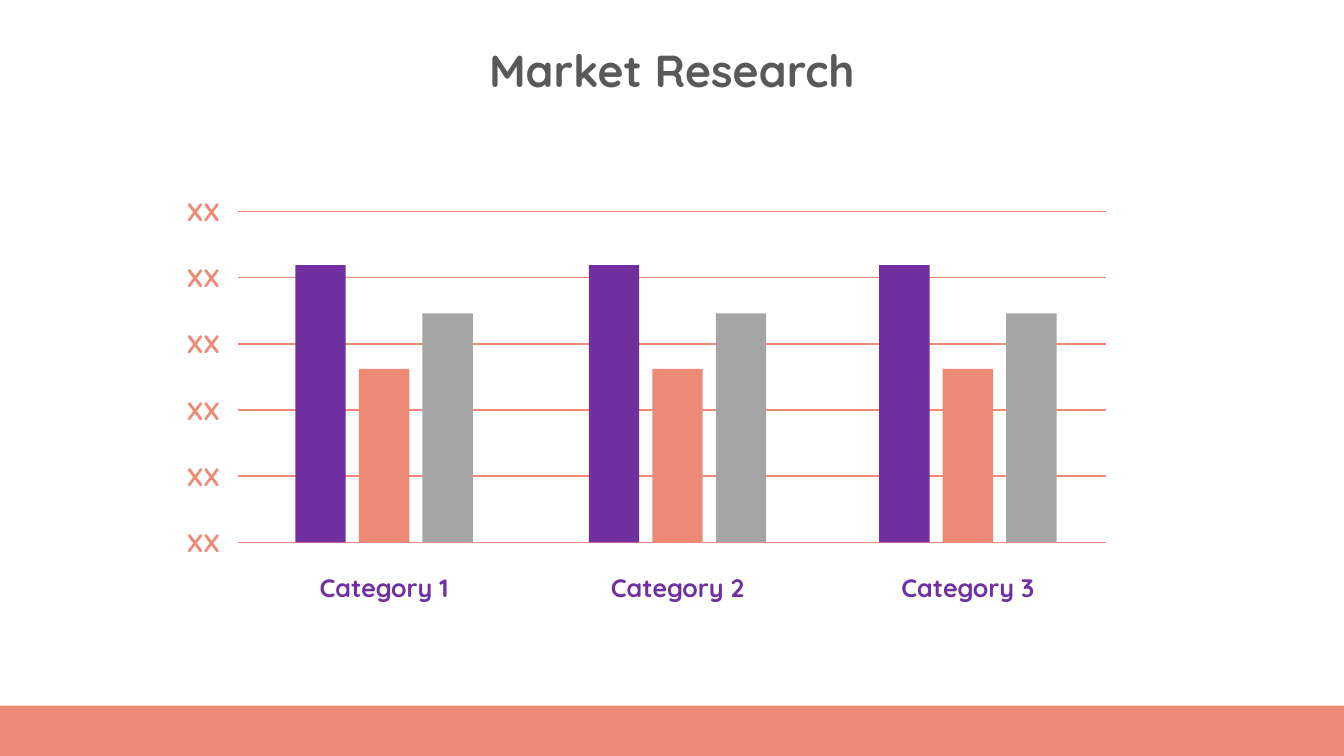
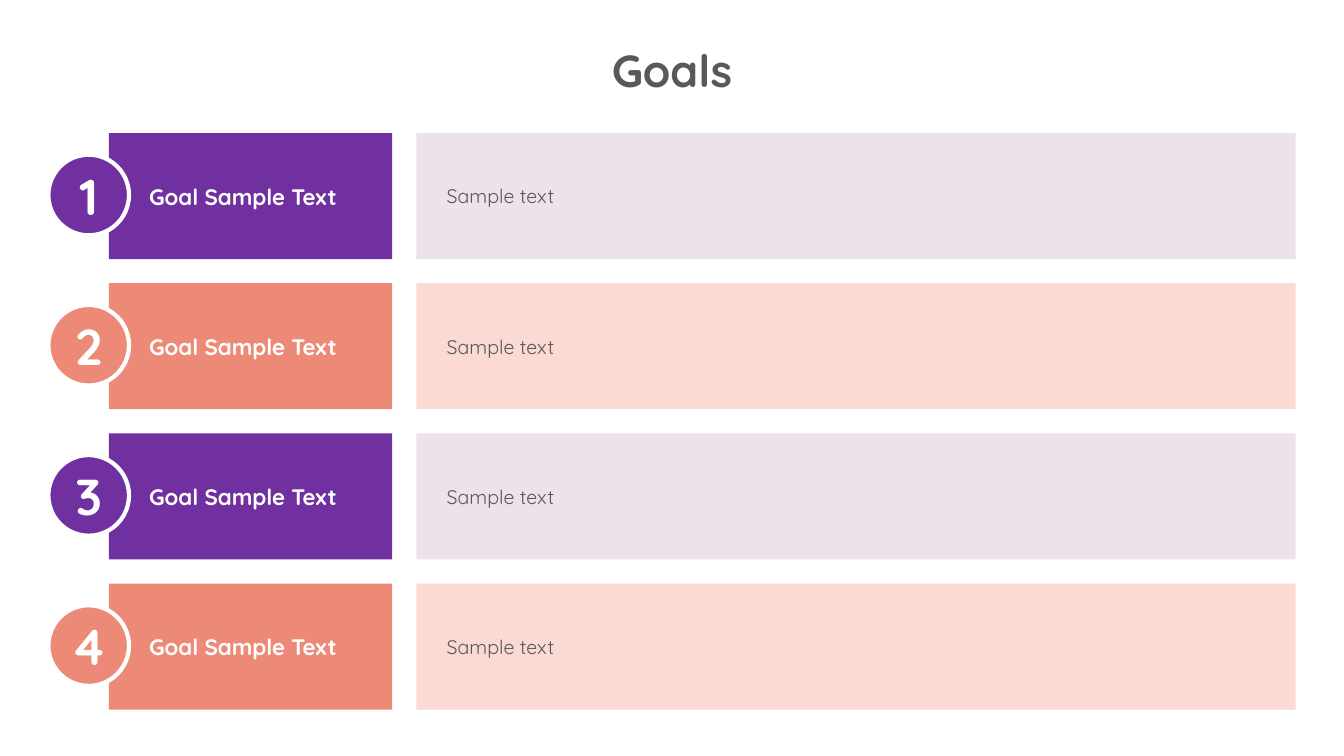
"""Build a market research slide and a goals slide."""
from dataclasses import dataclass

from lxml.etree import SubElement
from pptx import Presentation
from pptx.dml.color import RGBColor
from pptx.enum.shapes import MSO_CONNECTOR, MSO_SHAPE
from pptx.enum.text import MSO_ANCHOR as Anchor, PP_ALIGN as Align
from pptx.oxml.ns import qn
from pptx.util import Inches, Pt


@dataclass(frozen=True)
class Theme:
    font: str = "Quicksand"
    purple: str = "7030A0"
    coral: str = "ED8A77"
    gray: str = "A5A5A5"
    dark: str = "595959"
    white: str = "FFFFFF"
    pale_purple: str = "EDE2E9"
    pale_coral: str = "FADAD3"
    title_size: int = 32
    number_size: int = 36
    label_size: int = 18
    goal_size: int = 16
    body_size: int = 14


theme = Theme()


def add_box(slide, kind, area, fill):
    """Add a filled shape without outline or shadow."""
    box = slide.shapes.add_shape(kind, *map(Inches, area))
    box.shadow.inherit = False
    box.fill.solid()
    box.fill.fore_color.rgb = RGBColor.from_string(fill)
    box.line.fill.background()
    return box


def write(box, text, size, color, align, bold=True, insets=(0.1, 0.05, 0.1, 0.05), anchor=Anchor.MIDDLE):
    """Write one styled paragraph into a shape."""
    frame = box.text_frame
    frame.word_wrap = True
    frame.vertical_anchor = anchor
    frame.margin_left, frame.margin_top, frame.margin_right, frame.margin_bottom = map(Inches, insets)
    para = frame.paragraphs[0]
    para.alignment = align
    span = para.add_run()
    span.text = text
    span.font.name = theme.font
    span.font.size = Pt(size)
    span.font.bold = bold
    span.font.color.rgb = RGBColor.from_string(color)


deck = Presentation()
deck.slide_width, deck.slide_height = Inches(13.33), Inches(7.5)

slides = []
for title in ("Market Research", "Goals"):
    slide = deck.slides.add_slide(deck.slide_layouts[6])
    title_box = slide.shapes.add_textbox(Inches(3.12), Inches(0.37), Inches(7.09), Inches(0.64))
    write(title_box, title, theme.title_size, theme.dark, Align.CENTER, anchor=Anchor.TOP)
    slides.append(slide)
research, goals = slides

axis_left, axis_right, axis_top, baseline = 2.36, 10.97, 2.1, 5.38
grid_count = 6
grid_step = (baseline - axis_top) / (grid_count - 1)
grid = research.shapes.add_group_shape()
for index in range(grid_count):
    y = axis_top + index * grid_step
    line = grid.shapes.add_connector(
        MSO_CONNECTOR.STRAIGHT, Inches(axis_left), Inches(y), Inches(axis_right), Inches(y)
    )
    line.line.color.rgb = RGBColor.from_string(theme.coral)
    line.line.width = Pt(1)
    SubElement(line._element.spPr, qn("a:effectLst"))
    scale_label = research.shapes.add_textbox(Inches(1.68), Inches(y - 0.2), Inches(0.6), Inches(0.4))
    write(scale_label, "XX", theme.label_size, theme.coral, Align.RIGHT, anchor=Anchor.TOP)

bar_width, bar_step = 0.5, 0.63
bars = ((2.75, theme.purple), (1.72, theme.coral), (2.27, theme.gray))
for number, group_left in enumerate((2.93, 5.84, 8.72), 1):
    for index, (height, color) in enumerate(bars):
        left = group_left + index * bar_step
        add_box(research, MSO_SHAPE.RECTANGLE, (left, baseline - height, bar_width, height), color)
    category = research.shapes.add_textbox(Inches(group_left - 0.09), Inches(5.63), Inches(1.94), Inches(0.4))
    write(category, f"Category {number}", theme.label_size, theme.purple, Align.CENTER, anchor=Anchor.TOP)

add_box(research, MSO_SHAPE.RECTANGLE, (0, 7, 13.33, 0.5), theme.coral)

row_top, row_step, row_height, circle_size = 1.32, 1.49, 1.25, 0.8
row_colors = ((theme.purple, theme.pale_purple), (theme.coral, theme.pale_coral))
for index in range(4):
    top = row_top + index * row_step
    strong, pale = row_colors[index % 2]
    goal = add_box(goals, MSO_SHAPE.RECTANGLE, (1.08, top, 2.81, row_height), strong)
    write(goal, "Goal Sample Text", theme.goal_size, theme.white, Align.LEFT, insets=(0.4, 0.3, 0.1, 0.3))
    detail = add_box(goals, MSO_SHAPE.RECTANGLE, (4.13, top, 8.72, row_height), pale)
    write(detail, "Sample text", theme.body_size, theme.dark, Align.LEFT, bold=False, insets=(0.3, 0.2, 0.3, 0.2))
    circle_top = top + (row_height - circle_size) / 2 - 0.01
    circle = add_box(goals, MSO_SHAPE.OVAL, (0.48, circle_top, circle_size, circle_size), strong)
    circle.line.color.rgb = RGBColor.from_string(theme.white)
    circle.line.width = Pt(3)
    write(circle, str(index + 1), theme.number_size, theme.white, Align.CENTER, insets=(0, 0, 0, 0))

deck.save("out.pptx")
